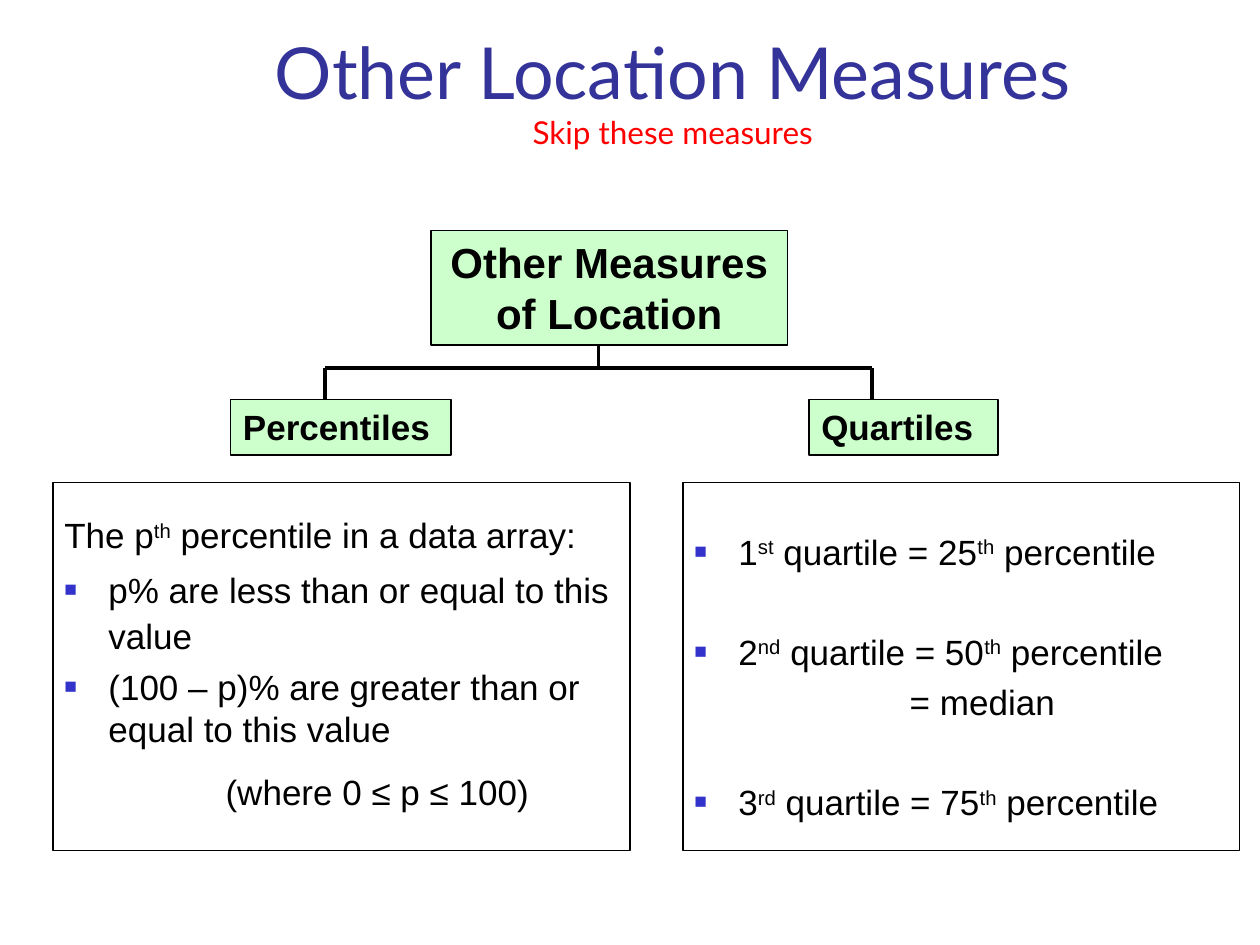
from lxml import etree
from pptx import Presentation
from pptx.dml.color import RGBColor
from pptx.enum.shapes import MSO_CONNECTOR, MSO_SHAPE
from pptx.enum.text import MSO_ANCHOR, PP_ALIGN
from pptx.oxml.ns import qn
from pptx.util import Inches, Pt

BLACK = "000000"
GREEN = "CCFFCC"
HANGING = 0.35
PARAGRAPH_GAP = 5
SKIPPED_LINE_GAP = 33


def color(value):
    return RGBColor.from_string(value)


def format_run(span, size, hue=BLACK, name="Arial", bold=False):
    span.font.size = Pt(size)
    span.font.name = name
    span.font.bold = bold
    span.font.color.rgb = color(hue)


def add_line(page, x1, y1, x2, y2):
    line = page.shapes.add_connector(
        MSO_CONNECTOR.STRAIGHT, Inches(x1), Inches(y1), Inches(x2), Inches(y2))
    line.line.color.rgb = color(BLACK)
    line.line.width = Pt(2.25)
    etree.SubElement(line._element.spPr, qn("a:effectLst"))


def add_box(page, left, top, width, height, fill=None, line_width=1.0):
    box = page.shapes.add_shape(
        MSO_SHAPE.RECTANGLE, Inches(left), Inches(top), Inches(width), Inches(height))
    box.shadow.inherit = False
    if fill:
        box.fill.solid()
        box.fill.fore_color.rgb = color(fill)
    else:
        box.fill.background()
    box.line.color.rgb = color(BLACK)
    box.line.width = Pt(line_width)
    frame = box.text_frame
    frame.word_wrap = True
    frame.vertical_anchor = MSO_ANCHOR.TOP
    return frame


def add_heading(page, text, left, top, width, height, size, align=PP_ALIGN.LEFT):
    frame = add_box(page, left, top, width, height, GREEN)
    frame.text = text
    para = frame.paragraphs[0]
    para.alignment = align
    format_run(para.runs[0], size, bold=True)


def set_indent(para, left, hanging, bullet):
    properties = para._p.get_or_add_pPr()
    properties.set("marL", str(Inches(left)))
    properties.set("indent", str(-Inches(hanging)))
    if bullet:
        bullet_color = etree.SubElement(properties, qn("a:buClr"))
        etree.SubElement(bullet_color, qn("a:srgbClr"), val="3333CC")
        etree.SubElement(properties, qn("a:buSzPct"), val="60000")
        etree.SubElement(properties, qn("a:buFont"), typeface="Arial")
        etree.SubElement(properties, qn("a:buChar"), char="■")
    else:
        etree.SubElement(properties, qn("a:buNone"))


def add_rich_text(para, text):
    """Add runs; the parts between carets are superscript."""
    for index, part in enumerate(text.split("^")):
        span = para.add_run()
        span.text = part
        format_run(span, 20)
        if index % 2:
            span._r.get_or_add_rPr().set("baseline", "30000")


def add_details(page, left, width, items):
    """Items are (text, bulleted, left indent, line spacing, space before)."""
    frame = add_box(page, left, 3.83, width, 2.92, line_width=0.75)
    frame.margin_left = frame.margin_right = Inches(0.09)
    frame.margin_top = Inches(0.08)
    for index, (text, bullet, indent, spacing, before) in enumerate(items):
        para = frame.add_paragraph() if index else frame.paragraphs[0]
        set_indent(para, indent, HANGING if bullet else 0, bullet)
        para.alignment = PP_ALIGN.LEFT
        para.line_spacing = spacing
        para.space_before = Pt(before)
        add_rich_text(para, text)


def add_title(page):
    box = page.shapes.add_textbox(Inches(1.08), Inches(0.42), Inches(8.52), Inches(0.83))
    frame = box.text_frame
    frame.word_wrap = True
    frame.vertical_anchor = MSO_ANCHOR.BOTTOM
    frame.text = "Other Location Measures\vSkip these measures"
    para = frame.paragraphs[0]
    para.alignment = PP_ALIGN.CENTER
    title, note = para.runs
    format_run(title, 41, "333399", "Lato")
    format_run(note, 18, "FF0000", "Lato")


def main():
    deck = Presentation()
    deck.slide_width, deck.slide_height = Inches(10), Inches(7.5)
    page = deck.slides.add_slide(deck.slide_layouts[6])

    trunk, left_branch, right_branch, bar = 4.75, 2.58, 6.92, 2.92
    add_line(page, trunk, 2.42, trunk, bar)
    add_line(page, left_branch, bar, right_branch, bar)
    for branch in (left_branch, right_branch):
        add_line(page, branch, bar, branch, 3.42)

    add_title(page)
    add_heading(page, "Other Measures of Location", 3.42, 1.83, 2.83, 0.91, 24,
                PP_ALIGN.CENTER)
    add_heading(page, "Percentiles", 1.83, 3.17, 1.75, 0.44, 20)
    add_heading(page, "Quartiles", 6.42, 3.17, 1.5, 0.44, 20)

    add_details(page, 5.42, 4.42, [
        ("1^st^ quartile = 25^th^ percentile", True, HANGING, 1.9, 0),
        ("2^nd^ quartile = 50^th^ percentile", True, HANGING, 1.0, SKIPPED_LINE_GAP),
        ("= median", False, 1.71, 1.0, PARAGRAPH_GAP),
        ("3^rd^ quartile = 75^th^ percentile", True, HANGING, 1.0, SKIPPED_LINE_GAP),
    ])
    add_details(page, 0.42, 4.58, [
        ("The p^th^ percentile in a data array:", False, 0, 1.5, 0),
        ("p% are less than or equal to this value", True, HANGING, 1.1, PARAGRAPH_GAP),
        ("(100 – p)% are greater than or equal to this value", True, HANGING, 1.0,
         PARAGRAPH_GAP),
        ("(where 0 ≤ p ≤ 100)", False, 1.28, 1.3, PARAGRAPH_GAP),
    ])
    deck.save("out.pptx")


if __name__ == "__main__":
    main()
